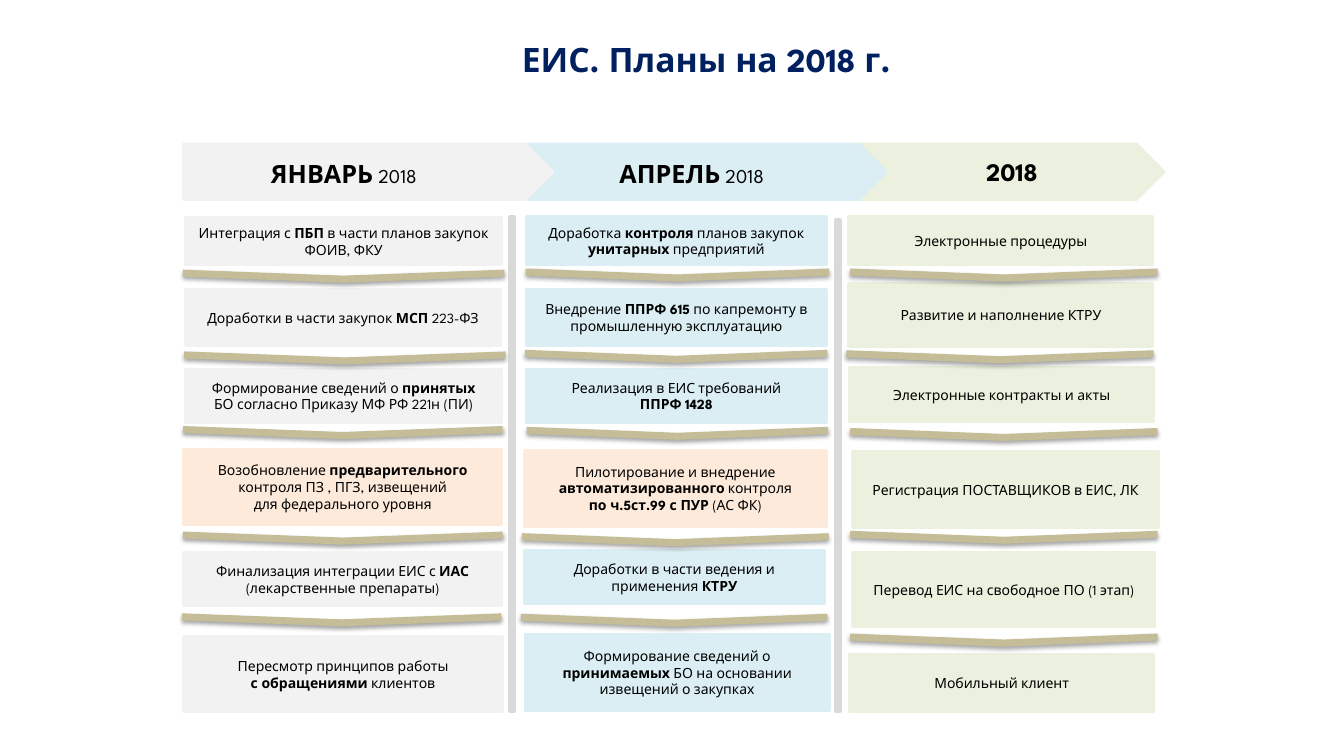
from lxml import etree
from pptx import Presentation
from pptx import util as u
from pptx.dml.color import RGBColor
from pptx.enum import shapes, text
from pptx.oxml import ns

FONT = "League Spartan"
BLACK = RGBColor(0x00, 0x00, 0x00)
NAVY = RGBColor(0x00, 0x20, 0x60)
GREY = RGBColor(0xF2, 0xF2, 0xF2)
BLUE = RGBColor(0xDB, 0xEE, 0xF4)
GREEN = RGBColor(0xEB, 0xF1, 0xDE)
PEACH = RGBColor(0xFD, 0xEA, 0xDA)
DIVIDER = RGBColor(0xD9, 0xD9, 0xD9)
KHAKI = RGBColor(0xC4, 0xBD, 0x97)

RECTANGLE = shapes.MSO_SHAPE.RECTANGLE
CHEVRON = shapes.MSO_SHAPE.CHEVRON
HEADER_TOP, HEADER_HEIGHT = 3.63, 1.4

# Each task: left, top, width, height in cm, fill, text with **bold** parts.
TASKS = [
    # January
    (4.67, 5.49, 7.98, 1.19, GREY, "Интеграция с **ПБП** в части планов закупок ФОИВ, ФКУ"),
    (4.67, 7.29, 7.95, 1.42, GREY, "Доработки в части закупок **МСП** 223-ФЗ"),
    (4.67, 9.3, 7.98, 1.35, GREY,
     "Формирование сведений о **принятых**\nБО согласно Приказу МФ РФ 221н (ПИ)"),
    (4.62, 11.33, 8.03, 1.88, PEACH,
     "Возобновление **предварительного**\nконтроля ПЗ , ПГЗ, извещений\nдля федерального уровня"),
    (4.62, 13.92, 8.03, 1.35, GREY,
     "Финализация интеграции ЕИС с **ИАС** (лекарственные препараты)"),
    (4.62, 16.03, 8.05, 1.91, GREY, "Пересмотр принципов работы\n**с обращениями** клиентов"),
    # April
    (13.26, 5.46, 7.57, 1.22, BLUE,
     "Доработка **контроля** планов закупок **унитарных** предприятий"),
    (13.26, 7.29, 7.57, 1.42, BLUE,
     "Внедрение **ППРФ 615** по капремонту в промышленную эксплуатацию"),
    (13.26, 9.3, 7.57, 1.35, BLUE, "Реализация в ЕИС требований\n**ППРФ 1428**"),
    (13.21, 11.35, 7.62, 1.91, PEACH,
     "Пилотирование и внедрение **автоматизированного** контроля\n"
     "**по ч.5ст.99 с ПУР** (АС ФК)"),
    (13.21, 13.87, 7.57, 1.35, BLUE, "Доработки в части ведения и применения **КТРУ**"),
    (13.23, 15.98, 7.67, 1.93, BLUE,
     "Формирование сведений о **принимаемых** БО на основании извещений о закупках"),
    # Whole year
    (21.39, 5.46, 7.67, 1.22, GREEN, "Электронные процедуры"),
    (21.39, 7.14, 7.67, 1.6, GREEN, "Развитие и наполнение КТРУ"),
    (21.41, 9.27, 7.67, 1.35, GREEN, "Электронные контракты и акты"),
    (21.49, 11.38, 7.7, 1.91, GREEN, "Регистрация ПОСТАВЩИКОВ в ЕИС, ЛК"),
    (21.49, 13.92, 7.62, 1.88, GREEN, "Перевод ЕИС на свободное ПО (1 этап)"),
    (21.41, 16.48, 7.67, 1.45, GREEN, "Мобильный клиент"),
]

# Centre x, centre y and length in cm of the arrows between tasks.
DOWN_ARROWS = [
    (8.66, 6.96, 8.08), (8.69, 9.02, 8.08), (8.64, 10.9, 8.03),
    (8.64, 13.56, 8.03), (8.61, 15.62, 8.03),
    (17.07, 6.93, 7.62), (17.04, 8.98, 7.59), (17.07, 10.92, 7.57),
    (17.02, 13.6, 7.7), (16.99, 15.63, 7.7),
    (25.3, 6.93, 7.72), (25.2, 8.99, 7.72), (25.3, 10.95, 7.72),
    (25.3, 13.54, 7.72), (25.3, 16.13, 7.72),
]


def set_attributes(target, values):
    for name, value in values.items():
        setattr(target, name, value)


def add_filled_shape(parent, kind, left, top, width, height, color, line_width=2):
    shape = parent.shapes.add_shape(kind, u.Cm(left), u.Cm(top), u.Cm(width), u.Cm(height))
    shape.shadow.inherit = False
    shape.fill.solid()
    shape.fill.fore_color.rgb = color
    shape.line.color.rgb = color
    shape.line.width = u.Pt(line_width)
    return shape


def write_text(shape, content, color=BLACK, size=10, bold_size=10,
               anchor=text.MSO_ANCHOR.MIDDLE):
    """Write centred text in which **parts** are bold."""
    frame = shape.text_frame
    set_attributes(frame, {"word_wrap": True, "vertical_anchor": anchor,
                           "auto_size": text.MSO_AUTO_SIZE.NONE})
    paragraph = frame.paragraphs[0]
    paragraph.alignment = text.PP_ALIGN.CENTER
    for line_number, line in enumerate(content.split("\n")):
        if line_number:
            paragraph.add_line_break()
        for position, part in enumerate(line.split("**")):
            if not part:
                continue
            bold = position % 2 == 1
            run = paragraph.add_run()
            run.text = part
            set_attributes(run.font, {"name": FONT, "bold": bold,
                                      "size": u.Pt(bold_size if bold else size)})
            run.font.color.rgb = color


def add_title(slide, content):
    title = slide.shapes.title
    set_attributes(title, {"left": u.Cm(12.4), "top": u.Cm(0.33),
                           "width": u.Cm(10.8), "height": u.Cm(2.31)})
    write_text(title, content, color=NAVY, bold_size=24)


def add_header(slide, kind, left, width, color):
    return add_filled_shape(slide, kind, left, HEADER_TOP, width, HEADER_HEIGHT, color)


def add_month(slide, kind, left, width, color, label_left, label_width, label):
    group = slide.shapes.add_group_shape()
    add_header(group, kind, left, width, color)
    box = add_filled_shape(group, RECTANGLE, label_left, 3.86, label_width, 1.02, color, 0.75)
    write_text(box, label, size=14, bold_size=18, anchor=text.MSO_ANCHOR.TOP)


def add_task(slide, left, top, width, height, color, content):
    write_text(add_filled_shape(slide, RECTANGLE, left, top, width, height, color), content)


def add_down_arrow(slide, center_x, center_y, length, thickness=0.3):
    arrow = add_filled_shape(slide, CHEVRON, center_x - thickness / 2, center_y - length / 2,
                             thickness, length, KHAKI, 0.75)
    arrow.rotation = 90
    effects = arrow.element.spPr.find(ns.qn("a:effectLst"))
    shadow = etree.SubElement(effects, ns.qn("a:outerShdw"), blurRad=str(u.Pt(3.1)),
                              dist=str(u.Pt(1.8)), dir="5400000", rotWithShape="0")
    color = etree.SubElement(shadow, ns.qn("a:srgbClr"), val="000000")
    etree.SubElement(color, ns.qn("a:alpha"), val="35000")


def main():
    presentation = Presentation()
    presentation.slide_width = u.Cm(33.87)
    presentation.slide_height = u.Cm(19.05)
    slide = presentation.slides.add_slide(presentation.slide_layouts[5])

    add_title(slide, "**ЕИС. Планы на 2018 г.**")
    year = add_header(slide, CHEVRON, 21.67, 7.67, GREEN)
    write_text(year, "**2018**", bold_size=18)
    add_month(slide, CHEVRON, 13.31, 9.02, BLUE, 14.02, 6.83, "**АПРЕЛЬ** 2018")
    add_month(slide, shapes.MSO_SHAPE.PENTAGON, 4.62, 9.32, GREY, 5.05, 7.24,
              "**ЯНВАРЬ** 2018")

    for left, top, height in ((12.85, 5.46, 12.47), (21.06, 5.54, 12.4)):
        add_filled_shape(slide, RECTANGLE, left, top, 0.13, height, DIVIDER)
    for task in TASKS:
        add_task(slide, *task)
    for arrow in DOWN_ARROWS:
        add_down_arrow(slide, *arrow)

    presentation.save("out.pptx")


if __name__ == "__main__":
    main()
